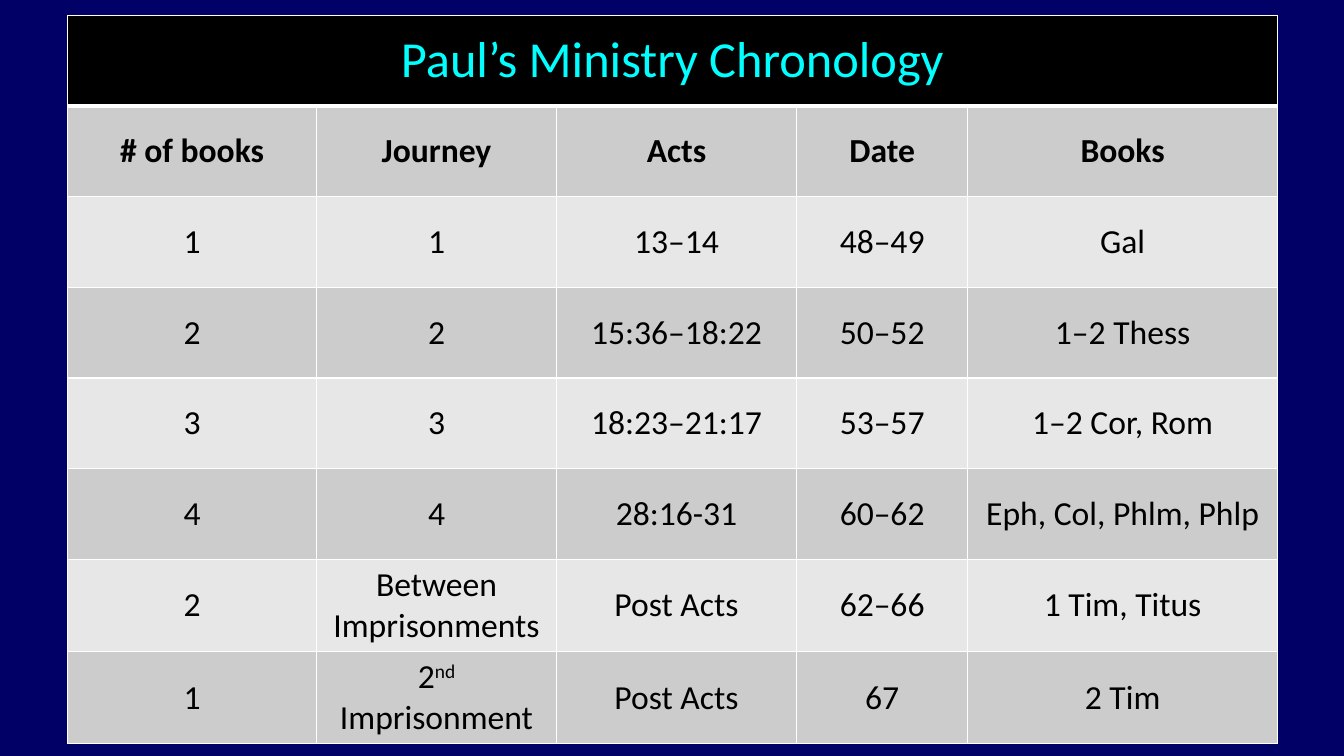
from lxml import etree
from pptx import Presentation
from pptx.dml.color import RGBColor
from pptx.enum.text import MSO_ANCHOR, PP_ALIGN
from pptx.oxml.ns import qn
from pptx.util import Inches, Pt

MIDDLE = MSO_ANCHOR.MIDDLE
CENTER = PP_ALIGN.CENTER

TITLE = "Paul’s Ministry Chronology"
ROWS = [
    ["# of books", "Journey", "Acts", "Date", "Books"],
    ["1", "1", "13–14", "48–49", "Gal"],
    ["2", "2", "15:36–18:22", "50–52", "1–2 Thess"],
    ["3", "3", "18:23–21:17", "53–57", "1–2 Cor, Rom"],
    ["4", "4", "28:16-31", "60–62", "Eph, Col, Phlm, Phlp"],
    ["2", "Between Imprisonments", "Post Acts", "62–66", "1 Tim, Titus"],
    ["1", "2nd Imprisonment", "Post Acts", "67", "2 Tim"],
]
COL_WIDTHS = [2.47, 2.38, 2.38, 1.7, 3.07]
ROW_HEIGHT = 0.9
TIGHT_ROWS = (4, 5)


def rgb(value):
    return RGBColor.from_string(value)


def set_borders(cell, **widths):
    """Draw white borders; widths maps lnL, lnR, lnT and lnB to points."""
    tc_pr = cell._tc.get_or_add_tcPr()
    for side, width in widths.items():
        ln = etree.SubElement(tc_pr, qn(f"a:{side}"), w=str(Pt(width)))
        fill = etree.SubElement(ln, qn("a:solidFill"))
        etree.SubElement(fill, qn("a:srgbClr"), val="FFFFFF")


prs = Presentation()
prs.slide_width = Inches(13.33)
prs.slide_height = Inches(7.5)
s = prs.slides.add_slide(prs.slide_layouts[6])
s.background.fill.solid()
s.background.fill.fore_color.rgb = rgb("000066")

grid = [[TITLE, "", "", "", ""]] + ROWS
table = s.shapes.add_table(
    len(grid), len(COL_WIDTHS), Inches(0.67), Inches(0.15),
    Inches(sum(COL_WIDTHS)), Inches(ROW_HEIGHT * len(grid))).table
for column, width in zip(table.columns, COL_WIDTHS):
    column.width = Inches(width)
for row in table.rows:
    row.height = Inches(ROW_HEIGHT)
table.cell(0, 0).merge(table.cell(0, len(COL_WIDTHS) - 1))

for i, values in enumerate(grid):
    for j, value in enumerate(values):
        cell = table.cell(i, j)
        set_borders(cell, lnL=1, lnR=1, lnT=3 if i == 1 else 1, lnB=3 if i == 0 else 1)
        cell.fill.solid()
        cell.fill.fore_color.rgb = rgb("000000" if i == 0 else "CCCCCC" if i % 2 else "E7E7E7")
        cell.vertical_anchor = MIDDLE
        if not value:
            continue
        p = cell.text_frame.paragraphs[0]
        p.alignment = CENTER
        if i in TIGHT_ROWS:
            p.line_spacing = 0.9
        # The ordinal ending is a run of its own so that it can be raised.
        before, ordinal, after = value.partition("nd ")
        parts = [before, "nd", " " + after] if ordinal else [value]
        for part in parts:
            r = p.add_run()
            r.text = part
            r.font.name = "Calibri"
            r.font.size = Pt(36 if i == 0 else 24)
            r.font.bold = i == 1
            r.font.color.rgb = rgb("00FFFF" if i == 0 else "000000")
            if part == "nd":
                r.font._element.set("baseline", "30000")

prs.save("out.pptx")
